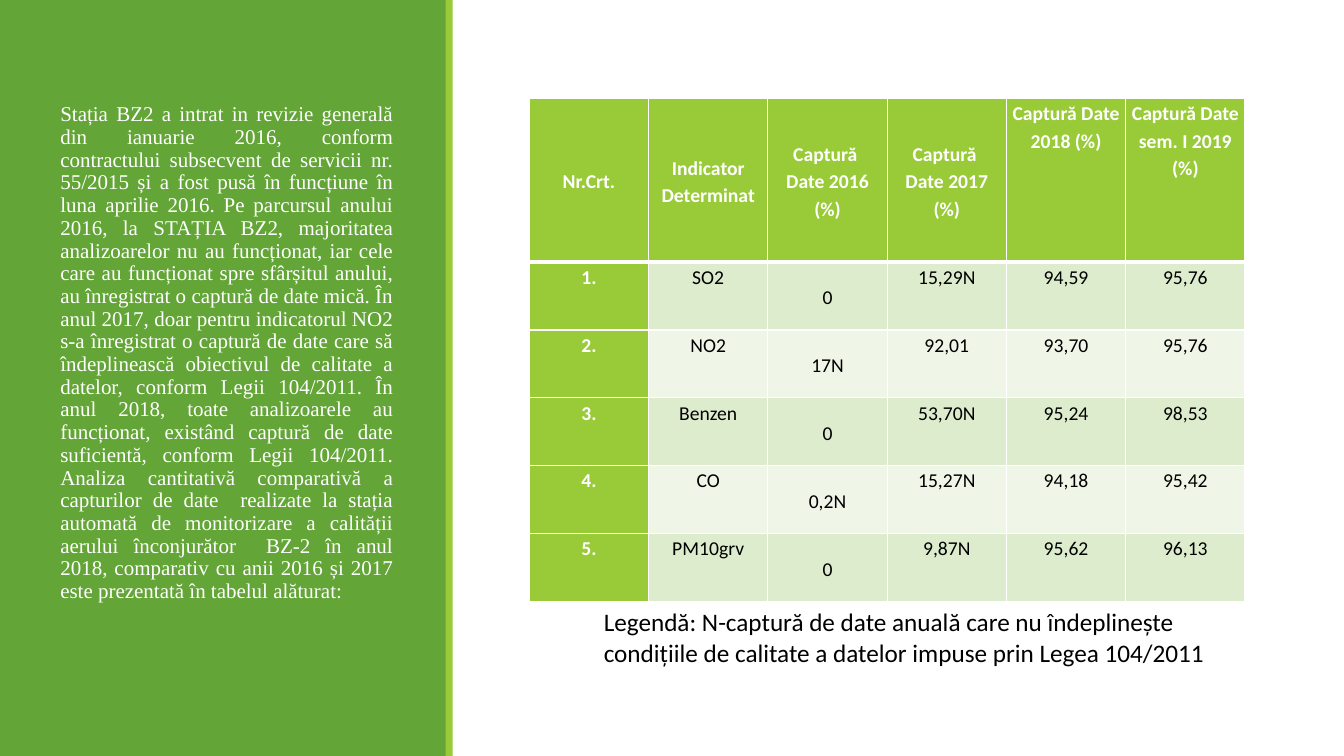
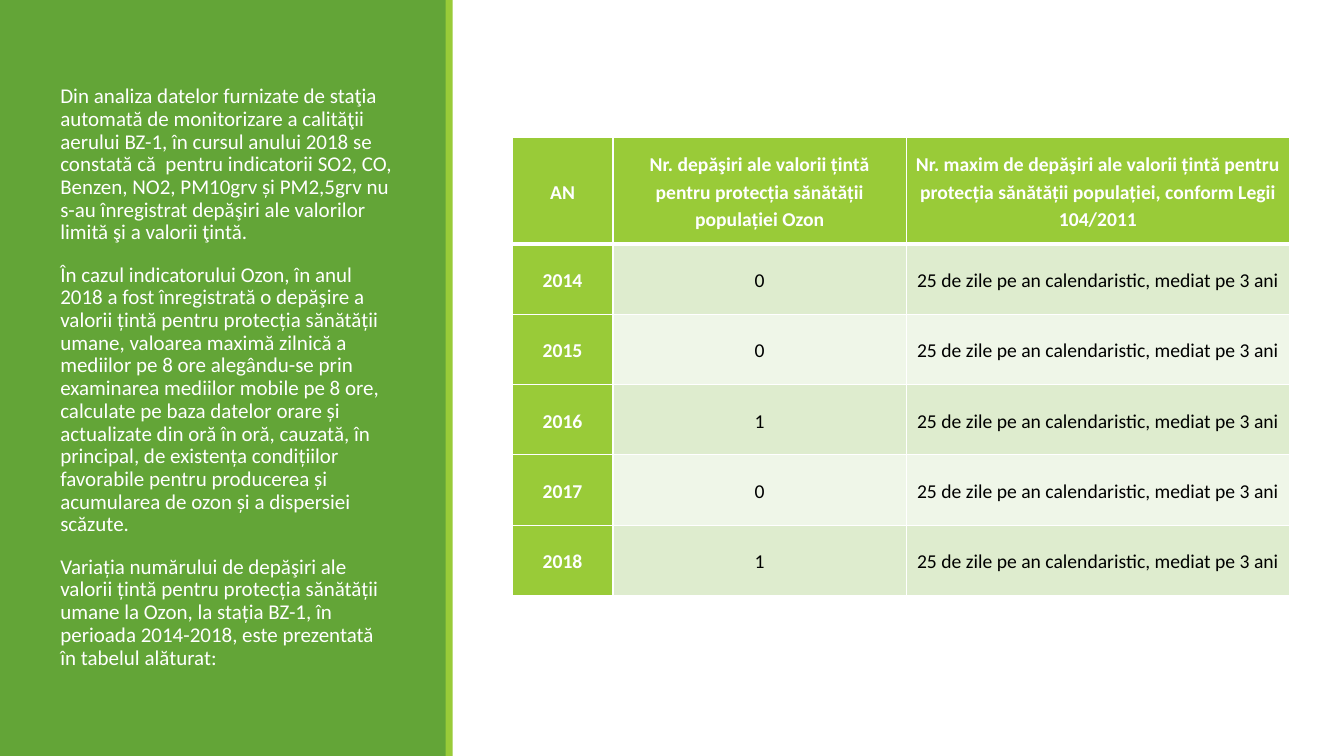
"""Build two slides on air monitoring data: a green text panel beside a table."""
from dataclasses import dataclass

from lxml import etree
from pptx import Presentation
from pptx import util as u
from pptx.dml.color import RGBColor
from pptx.enum import shapes, text
from pptx.oxml import ns

PAGE_WIDTH, PAGE_HEIGHT = 1333, 750
EMU_PER_PX = 9144


@dataclass(frozen=True)
class Theme:
    """Colours, fonts and type sizes shared by the slides."""
    panel: str = "63A537"
    accent: str = "99CB38"
    bands: tuple = ("DEECCE", "EFF6E8")
    light: str = "FFFFFF"
    dark: str = "000000"
    sans: str = "Calibri"
    serif: str = "Times New Roman"
    panel_size: int = 15
    cell_size: int = 14
    legend_size: int = 18
    rule: int = 1
    header_rule: int = 3


THEME = Theme()

STATION_LINES = [
    "Stația BZ2 a intrat in revizie generală din ianuarie 2016, conform contractului subsecvent "
    "de servicii nr. 55/2015 și a fost pusă în funcțiune în luna aprilie 2016. Pe parcursul anului "
    "2016, la STAȚIA BZ2, majoritatea analizoarelor nu au funcționat, iar cele care au funcționat "
    "spre sfârșitul anului, au înregistrat o captură de date mică. În anul 2017, doar pentru "
    "indicatorul NO2 s-a înregistrat o captură de date care să îndeplinească obiectivul de calitate "
    "a datelor, conform Legii 104/2011. În anul 2018, toate analizoarele au funcționat, existând "
    "captură de date suficientă, conform Legii 104/2011.",
    "Analiza cantitativă comparativă a capturilor de date  realizate la stația automată de "
    "monitorizare a calității aerului înconjurător  BZ-2 în anul 2018, comparativ cu anii 2016 și "
    "2017 este prezentată în tabelul alăturat:",
]

OZONE_TEXTS = [
    "Din analiza datelor furnizate de staţia automată de monitorizare a calităţii aerului BZ-1, în "
    "cursul anului 2018 se constată că  pentru indicatorii SO2, CO, Benzen, NO2, PM10grv și "
    "PM2,5grv nu s-au înregistrat depăşiri ale valorilor limită şi a valorii ţintă.",
    "În cazul indicatorului Ozon, în anul 2018 a fost înregistrată o depăşire a valorii țintă "
    "pentru protecția sănătății umane, valoarea maximă zilnică a mediilor pe 8 ore alegându-se "
    "prin examinarea mediilor mobile pe 8 ore, calculate pe baza datelor orare și actualizate din "
    "oră în oră, cauzată, în principal, de existența condițiilor favorabile pentru producerea și "
    "acumularea de ozon și a dispersiei scăzute.",
    "Variația numărului de depăşiri ale valorii țintă pentru protecția sănătății umane la Ozon, la "
    "stația BZ-1, în perioada 2014-2018, este prezentată în tabelul alăturat:",
]

LEGEND = (
    "Legendă: N-captură de date anuală care nu îndeplinește condițiile de calitate a datelor "
    "impuse prin Legea 104/2011"
)

CAPTURE_ROWS = [
    ["Nr.Crt.", "Indicator Determinat", "Captură  Date 2016 (%)", "Captură  Date 2017 (%)",
     "Captură Date 2018 (%)", "Captură Date sem. I 2019 (%)"],
    ["1.", "SO2", "0", "15,29N", "94,59", "95,76"],
    ["2.", "NO2", "17N", "92,01", "93,70", "95,76"],
    ["3.", "Benzen", "0", "53,70N", "95,24", "98,53"],
    ["4.", "CO", "0,2N", "15,27N", "94,18", "95,42"],
    ["5.", "PM10grv", "0", "9,87N", "95,62", "96,13"],
]

OZONE_LIMIT = "25 de zile pe an calendaristic, mediat pe 3 ani"
OZONE_EXCEEDANCES = {"2014": "0", "2015": "0", "2016": "1", "2017": "0", "2018": "1"}
OZONE_ROWS = [
    ["AN", "Nr. depăşiri ale valorii țintă pentru protecția sănătății populației Ozon",
     "Nr. maxim de depăşiri ale valorii țintă pentru protecția sănătății populației, "
     "conform Legii 104/2011"],
    *([year, count, OZONE_LIMIT] for year, count in OZONE_EXCEEDANCES.items()),
]


def px(length):
    """Turn pixels into EMU."""
    return u.Emu(round(length * EMU_PER_PX))


def style_font(font, face, size, color, bold=False):
    """Set the face, size, colour and weight of a font."""
    font.name, font.size, font.bold = face, u.Pt(size), bold
    font.color.rgb = RGBColor.from_string(color)


def add_band(page, left, width, color):
    """Draw a plain full-height band."""
    band = page.shapes.add_shape(
        shapes.MSO_SHAPE.RECTANGLE, px(left), 0, px(width), px(PAGE_HEIGHT))
    band.shadow.inherit = False
    band.fill.solid()
    band.fill.fore_color.rgb = RGBColor.from_string(color)
    band.line.fill.background()


def add_page(deck):
    """Add a blank slide with the green side panel."""
    page = deck.slides.add_slide(deck.slide_layouts[6])
    add_band(page, 0, 443, THEME.panel)
    add_band(page, 442, 7, THEME.accent)
    return page


def add_text(page, bounds, contents, face, size, color):
    """Add a wrapping text box and return its frame."""
    frame = page.shapes.add_textbox(*map(px, bounds)).text_frame
    frame.word_wrap = True
    for index, content in enumerate(contents):
        para = frame.add_paragraph() if index else frame.paragraphs[0]
        para.text = content
        style_font(para.font, face, size, color)
    return frame


def add_panel_text(page, top, height, contents, face, align):
    """Write the white commentary on the side panel."""
    frame = add_text(page, (50, top, 350, height), contents, face, THEME.panel_size, THEME.light)
    for para in frame.paragraphs:
        para.alignment = align
        para.line_spacing = 0.9
        para.space_before, para.space_after = u.Pt(12), u.Pt(2)


def add_border(cell, side, width):
    """Draw a white line on one side of a cell."""
    line = etree.SubElement(
        cell._tc.get_or_add_tcPr(), ns.qn(f"a:ln{side}"), w=str(u.Pt(width)))
    fill = etree.SubElement(line, ns.qn("a:solidFill"))
    etree.SubElement(fill, ns.qn("a:srgbClr"), val=THEME.light)


def format_cell(cell, row, column, inset, gap, middle):
    """Format a cell by its place in the table."""
    heading = row == 0 or column == 0
    thick_side = {0: "B", 1: "T"}.get(row)
    for side in "LRTB":
        add_border(cell, side, THEME.header_rule if side == thick_side else THEME.rule)
    cell.fill.solid()
    cell.fill.fore_color.rgb = RGBColor.from_string(
        THEME.accent if heading else THEME.bands[(row - 1) % 2])
    cell.margin_left = cell.margin_right = px(inset)
    cell.margin_top = cell.margin_bottom = 0
    cell.vertical_anchor = text.MSO_ANCHOR.MIDDLE if middle else text.MSO_ANCHOR.TOP
    para = cell.text_frame.paragraphs[0]
    para.alignment = text.PP_ALIGN.CENTER
    para.line_spacing, para.space_after = 1.15, u.Pt(gap)
    style_font(para.font, THEME.sans, THEME.cell_size,
               THEME.light if heading else THEME.dark, heading)


def add_data_table(page, left, top, height, widths, header_height, rows, inset, gap,
                   middle_header, middle_body):
    """Add a table; the middle sets name the vertically centred columns."""
    table = page.shapes.add_table(
        len(rows), len(widths), px(left), px(top), px(sum(widths)), px(height)).table
    table.horz_banding = False
    for column, width in enumerate(widths):
        table.columns[column].width = px(width)
    body_height = (height - header_height) / (len(rows) - 1)
    for row, values in enumerate(rows):
        table.rows[row].height = px(body_height if row else header_height)
        for column, value in enumerate(values):
            cell = table.cell(row, column)
            cell.text = value
            middle = column in (middle_body if row else middle_header)
            format_cell(cell, row, column, inset, gap, middle)


def add_capture_page(deck):
    """Show the data capture of station BZ2."""
    page = add_page(deck)
    add_panel_text(page, 98, 591, ["\n".join(STATION_LINES)], THEME.serif,
                   text.PP_ALIGN.JUSTIFY)
    legend = add_text(page, (589, 597, 667, 71), [LEGEND],
                      THEME.sans, THEME.legend_size, THEME.dark)
    legend.auto_size = text.MSO_AUTO_SIZE.SHAPE_TO_FIT_TEXT
    add_data_table(page, 525, 98, 499, [710 / 6] * 6, 162, CAPTURE_ROWS, inset=5, gap=10,
                   middle_header={0, 1, 2, 3}, middle_body={2})


def add_ozone_page(deck):
    """Show the ozone exceedances at station BZ-1."""
    page = add_page(deck)
    add_data_table(page, 508, 136, 455, [100, 291, 380], 106, OZONE_ROWS, inset=7, gap=6,
                   middle_header={0, 1, 2}, middle_body={0, 1, 2})
    add_panel_text(page, 80, 610, OZONE_TEXTS, THEME.sans, text.PP_ALIGN.LEFT)


def main():
    """Build and save the deck."""
    deck = Presentation()
    deck.slide_width, deck.slide_height = px(PAGE_WIDTH), px(PAGE_HEIGHT)
    add_capture_page(deck)
    add_ozone_page(deck)
    deck.save("out.pptx")


if __name__ == "__main__":
    main()
